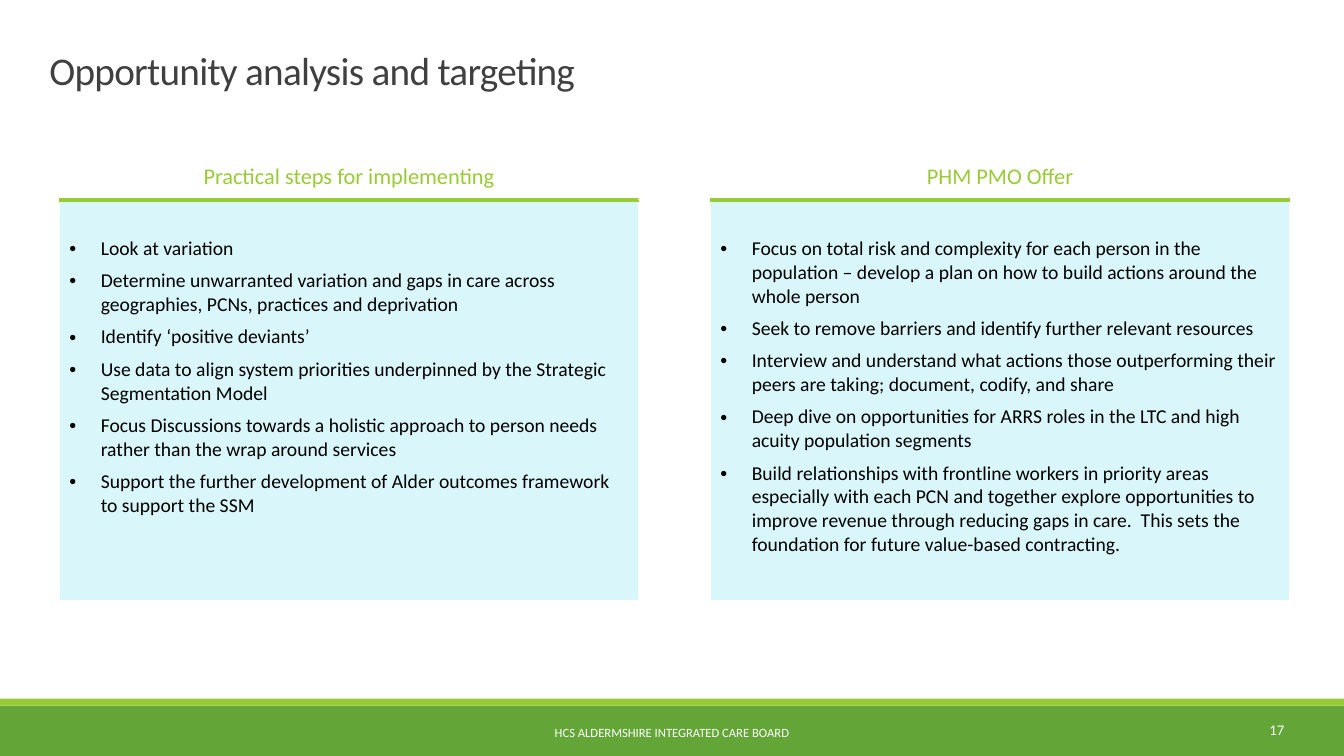
"""Build the slide on opportunity analysis and targeting."""
import pptx
import pptx.dml.color
import pptx.enum.shapes
import pptx.enum.text
import pptx.oxml
import pptx.oxml.ns
import pptx.util

Pt = pptx.util.Pt
RGBColor = pptx.dml.color.RGBColor
PP_ALIGN = pptx.enum.text.PP_ALIGN
MIDDLE = pptx.enum.text.MSO_ANCHOR.MIDDLE

GREEN = RGBColor(0x63, 0xA5, 0x37)
LIME = RGBColor(0x99, 0xCB, 0x38)
PALE_BLUE = RGBColor(0xD9, 0xF6, 0xFA)
GREY = RGBColor(0x40, 0x40, 0x40)
BLACK = RGBColor(0, 0, 0)
WHITE = RGBColor(0xFF, 0xFF, 0xFF)

COLUMNS = {
    0: ("Practical steps for implementing", [
        "Look at variation",
        "Determine unwarranted variation and gaps in care across geographies, PCNs, practices and deprivation",
        "Identify ‘positive deviants’",
        "Use data to align system priorities underpinned by the Strategic Segmentation Model",
        "Focus Discussions towards a holistic approach to person needs rather than the wrap around services",
        "Support the further development of Alder outcomes framework to support the SSM",
    ]),
    2: ("PHM PMO Offer", [
        "Focus on total risk and complexity for each person in the population – develop a plan on how to build "
        "actions around the whole person",
        "Seek to remove barriers and identify further relevant resources",
        "Interview and understand what actions those outperforming their peers are taking; document, codify, and share",
        "Deep dive on opportunities for ARRS roles in the LTC and high acuity population segments",
        "Build relationships with frontline workers in priority areas especially with each PCN and together explore "
        "opportunities to improve revenue through reducing gaps in care.  This sets the foundation for future "
        "value-based contracting.",
    ]),
}


def style(para, size, color, align=PP_ALIGN.LEFT):
    para.alignment = align
    para.font.name = "Calibri"
    para.font.size = Pt(size)
    para.font.color.rgb = color


def add_border(cell, side, color, width):
    cell._tc.get_or_add_tcPr().append(pptx.oxml.parse_xml(
        f'<a:ln{side} {pptx.oxml.ns.nsdecls("a")} w="{Pt(width)}"><a:solidFill>'
        f'<a:srgbClr val="{color}"/></a:solidFill></a:ln{side}>'))


deck = pptx.Presentation()
deck.slide_width, deck.slide_height = Pt(960), Pt(540)
page = deck.slides.add_slide(deck.slide_layouts[5])

for top, height, color in [(504, 36, GREEN), (499, 5, LIME)]:
    band = page.shapes.add_shape(
        pptx.enum.shapes.MSO_SHAPE.RECTANGLE, 0, Pt(top), Pt(960), Pt(height))
    band.shadow.inherit = False
    band.fill.solid()
    band.fill.fore_color.rgb = color
    band.line.fill.background()

title = page.shapes.title
title.left, title.top, title.width, title.height = Pt(35.3), Pt(0), Pt(888.5), Pt(104.4)
frame = title.text_frame
frame.margin_left = frame.margin_top = frame.margin_right = frame.margin_bottom = 0
frame.vertical_anchor = MIDDLE
frame.text = "Opportunity analysis and targeting"
para = frame.paragraphs[0]
style(para, 28, GREY)
para.line_spacing = 0.85
para.runs[0].font._element.set("spc", "-50")

table = page.shapes.add_table(2, 3, Pt(42.3), Pt(113.2), Pt(879), Pt(316)).table
table.first_row = table.horz_banding = False
for column, width in zip(table.columns, (414, 51, 414)):
    column.width = Pt(width)
for row, height in zip(table.rows, (29.5, 286.5)):
    row.height = Pt(height)

for row in range(2):
    for column in range(3):
        cell = table.cell(row, column)
        rule_side = "B" if row == 0 else "T"
        for side in "LRTB":
            if side == rule_side and column in COLUMNS:
                add_border(cell, side, LIME, 3)
            else:
                add_border(cell, side, WHITE, 1)
        cell.fill.background()

for column, (heading, points) in COLUMNS.items():
    header, body = table.cell(0, column), table.cell(1, column)
    header.text = heading
    style(header.text_frame.paragraphs[0], 16, LIME, PP_ALIGN.CENTER)

    body.fill.solid()
    body.fill.fore_color.rgb = PALE_BLUE
    body.margin_top = Pt(26.6)
    body.text = "\n".join(points)
    for para in body.text_frame.paragraphs:
        style(para, 14, BLACK)
        para.space_before = para.space_after = Pt(3)
        properties = para._p.get_or_add_pPr()
        properties.set("marL", str(Pt(22.5)))
        properties.set("indent", str(-Pt(22.5)))
        for bullet in ('buFont {} typeface="Arial"', 'buChar {} char="•"'):
            properties.append(pptx.oxml.parse_xml(f'<a:{bullet.format(pptx.oxml.ns.nsdecls("a"))}/>'))

for text, left, top, width, size, align in [
    ("17", 822.2, 506.9, 102.2, 10.5, PP_ALIGN.RIGHT),
    ("HCS ALDERMSHIRE INTEGRATED CARE BOARD", 290.2, 508.5, 379.4, 9, PP_ALIGN.CENTER),
]:
    box = page.shapes.add_textbox(Pt(left), Pt(top), Pt(width), Pt(28.8))
    box.text_frame.word_wrap = True
    box.text_frame.vertical_anchor = MIDDLE
    box.text_frame.text = text
    style(box.text_frame.paragraphs[0], size, WHITE, align)

deck.save("out.pptx")
